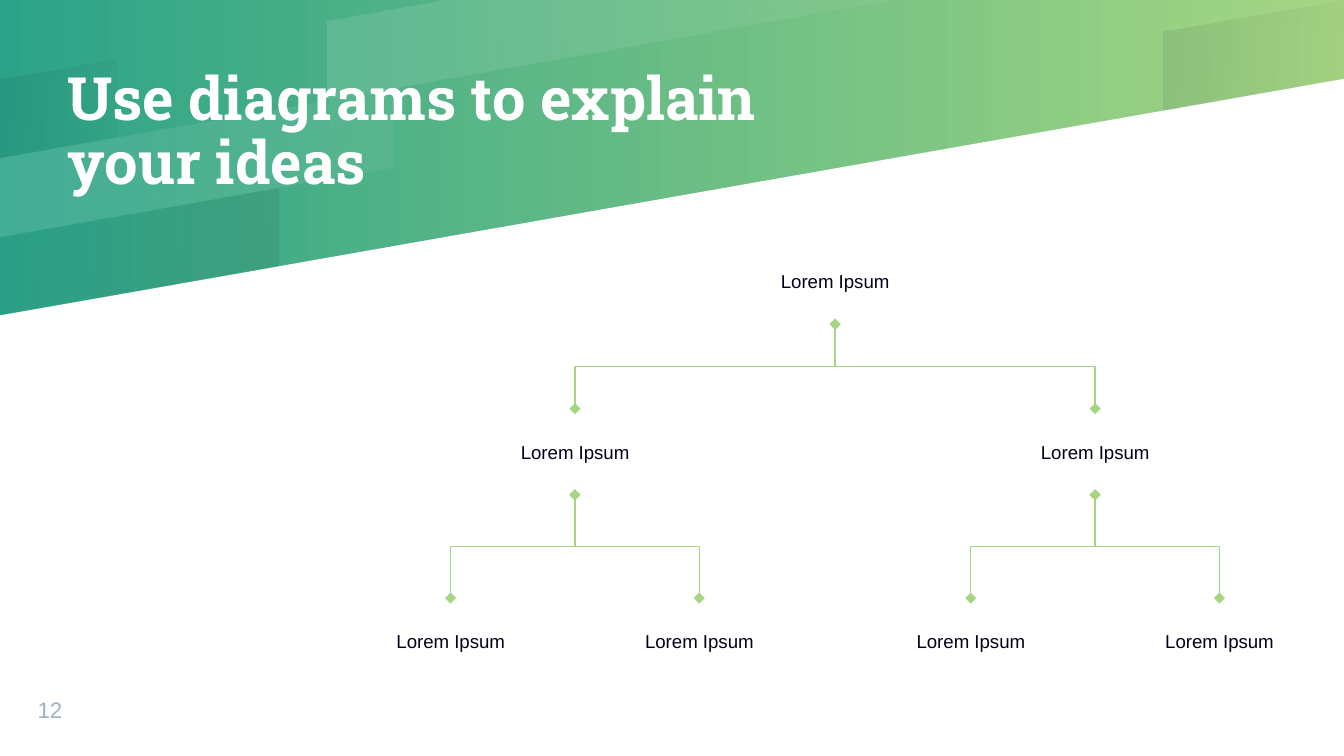
from dataclasses import dataclass

from lxml import etree
from pptx import Presentation
from pptx.dml.color import RGBColor
from pptx.enum.shapes import MSO_CONNECTOR
from pptx.enum.text import MSO_ANCHOR, PP_ALIGN
from pptx.oxml.ns import qn
from pptx.util import Inches, Pt

ELBOW = MSO_CONNECTOR.ELBOW
MIDDLE, BOTTOM = MSO_ANCHOR.MIDDLE, MSO_ANCHOR.BOTTOM
LEFT, CENTER = PP_ALIGN.LEFT, PP_ALIGN.CENTER
TOP_SITE, BOTTOM_SITE = 0, 2

WIDTH, HEIGHT = Inches(10), Inches(5.625)


@dataclass(frozen=True)
class Theme:
    teal: str = "2CA388"
    lime: str = "A6D683"
    white: str = "FFFFFF"
    ink: str = "00001A"
    grey: str = "9EB3C2"
    heading: str = "Roboto Slab"
    body: str = "Arial"
    title_size: float = 32
    number_size: float = 12
    label_size: float = 10
    line_width: float = 0.75


THEME = Theme()


@dataclass(frozen=True)
class Box:
    left: float
    top: float
    width: float
    height: float

    def share(self, left, top, width, height):
        """A box given as shares of this one."""
        return Box(self.left + left * self.width, self.top + top * self.height,
                   width * self.width, height * self.height)

    def corners(self):
        return [round(v) for v in (self.left, self.top, self.width, self.height)]


def rgb(value):
    return RGBColor.from_string(value)


def add_child(parent, tag, **attributes):
    return etree.SubElement(parent, qn(tag), attributes)


def add_text(page, box, text, font, anchor, align=LEFT, inset=0, spacing=1):
    shape = page.shapes.add_textbox(*box.corners())
    frame = shape.text_frame
    margins = {f"margin_{side}": Inches(inset) for side in ("left", "top", "right", "bottom")}
    for name, value in {"word_wrap": True, "vertical_anchor": anchor, **margins}.items():
        setattr(frame, name, value)
    para = frame.paragraphs[0]
    para.alignment, para.line_spacing = align, spacing
    span = para.add_run()
    span.text = text
    font = dict(font)
    span.font.color.rgb = rgb(font.pop("color"))
    for name, value in font.items():
        setattr(span.font, name, value)
    return shape


def fill_gradient(fill, colors, angle):
    fill.gradient()
    fill.gradient_angle = angle
    for stop, color in zip(fill.gradient_stops, colors):
        stop.color.rgb = rgb(color)


def add_polygon(page, points):
    points = [(round(x), round(y)) for x, y in points]
    builder = page.shapes.build_freeform(*points[0])
    builder.add_line_segments(points[1:], close=True)
    shape = builder.convert_to_shape()
    shape.shadow.inherit = False
    shape.line.fill.background()
    return shape


def add_backdrop(page, box):
    """Gradient backdrop with slanted bands; every edge falls by three levels over the width."""
    fill_gradient(page.background.fill, (THEME.teal, THEME.lime), 0)
    level_run = box.width / 3
    level_rise = box.height * 0.1043

    def edge(x, level):
        return box.left + x, box.top + level_rise * (level - x / level_run)

    # White lower panel
    foot = box.top + box.height
    panel = add_polygon(page, [edge(0, 4), edge(box.width, 4),
                               (box.left + box.width, foot), (box.left, foot)])
    panel.fill.solid()
    panel.fill.fore_color.rgb = rgb(THEME.white)

    # Translucent bands: start and end as shares of the width, level, colour, opacity in percent
    bands = [
        (0.244, 1, 1, THEME.white, (12, 5)),
        (0, 0.087, 1, THEME.ink, (8, 2)),
        (0, 0.207, 3, THEME.ink, (2, 8)),
        (0.866, 1, 3, THEME.ink, (8, 2)),
        (0, 0.293, 2, THEME.white, (12, 5)),
    ]
    for start, end, level, color, opacities in bands:
        start, end = start * box.width, end * box.width
        # A band stops where its edges leave the top of the slide
        upper_end = min(end, level * level_run)
        lower_end = min(end, (level + 1) * level_run)
        band = add_polygon(page, [edge(start, level), edge(start, level + 1),
                                  edge(lower_end, level + 1), edge(upper_end, level)])
        fill_gradient(band.fill, (color, color), 350)
        for stop_color, opacity in zip(band.element.spPr.iter(qn("a:srgbClr")), opacities):
            add_child(stop_color, "a:alpha", val=str(opacity * 1000))


def add_title(page, box):
    font = {"name": THEME.heading, "size": Pt(THEME.title_size), "bold": True,
            "color": THEME.white}
    shape = add_text(page, box, "Use diagrams to explain your ideas", font, MIDDLE, spacing=0.9)
    # Soft shadow behind the letters
    effects = etree.Element(qn("a:effectLst"))
    shadow = add_child(effects, "a:outerShdw", blurRad=str(Pt(3)), dist=str(Pt(2)),
                       dir="2700000", algn="bl", rotWithShape="0")
    shadow_color = add_child(shadow, "a:srgbClr", val=THEME.ink)
    add_child(shadow_color, "a:alpha", val="30000")
    next(shape.element.iter(qn("a:rPr"))).find(qn("a:solidFill")).addnext(effects)


def add_page_number(page, box):
    font = {"name": THEME.body, "size": Pt(THEME.number_size), "color": THEME.grey}
    add_text(page, box, "12", font, BOTTOM)


def join_nodes(page, parent, child):
    """Elbow from the parent's bottom to the child's top, with a diamond at each end."""
    link = page.shapes.add_connector(ELBOW, 0, 0, 0, 0)
    link.begin_connect(parent, BOTTOM_SITE)
    link.end_connect(child, TOP_SITE)
    start_x, end_x = (node.left + node.width // 2 for node in (parent, child))
    start_y, end_y = parent.top + parent.height, child.top
    drop, reach = end_y - start_y, abs(end_x - start_x)
    to_right = end_x > start_x
    # The frame is turned a quarter so that the elbow leaves vertically
    frame = {"left": (start_x + end_x - drop) // 2, "top": (start_y + end_y - reach) // 2,
             "width": drop, "height": reach}
    for name, value in frame.items():
        setattr(link, name, value)
    turn = {"rot": 270 if to_right else 90, "flipH": to_right, "flipV": False}
    for name, value in turn.items():
        setattr(link.element.spPr.xfrm, name, value)
    link.line.color.rgb = rgb(THEME.lime)
    link.line.width = Pt(THEME.line_width)
    outline = link.element.spPr.find(qn("a:ln"))
    for end in ("a:headEnd", "a:tailEnd"):
        add_child(outline, end, type="diamond")
    add_child(link.element.spPr, "a:effectLst")


def add_tree(page, box):
    rows = (0, 0.3825, 0.807)
    spreads = (0.2615, 0.125)
    node_width, node_height = 0.227, 0.193
    font = {"name": THEME.body, "size": Pt(THEME.label_size), "color": THEME.ink}

    def add_branch(center, depth):
        place = box.share(center - node_width / 2, rows[depth], node_width, node_height)
        node = add_text(page, place, "Lorem Ipsum", font, MIDDLE, CENTER, inset=0.1)
        if depth < len(spreads):
            for side in (-1, 1):
                child = add_branch(center + side * spreads[depth], depth + 1)
                join_nodes(page, node, child)
        return node

    add_branch(0.5, 0)


def main():
    deck = Presentation()
    deck.slide_width, deck.slide_height = WIDTH, HEIGHT
    page = deck.slides.add_slide(deck.slide_layouts[6])
    whole = Box(0, 0, WIDTH, HEIGHT)
    add_backdrop(page, whole)
    add_title(page, whole.share(0.05, 0, 0.6, 0.352))
    add_page_number(page, whole.share(0.028, 0.909, 0.053, 0.048))
    add_tree(page, whole.share(0.2513, 0.315, 0.74, 0.59))
    deck.save("out.pptx")


if __name__ == "__main__":
    main()
